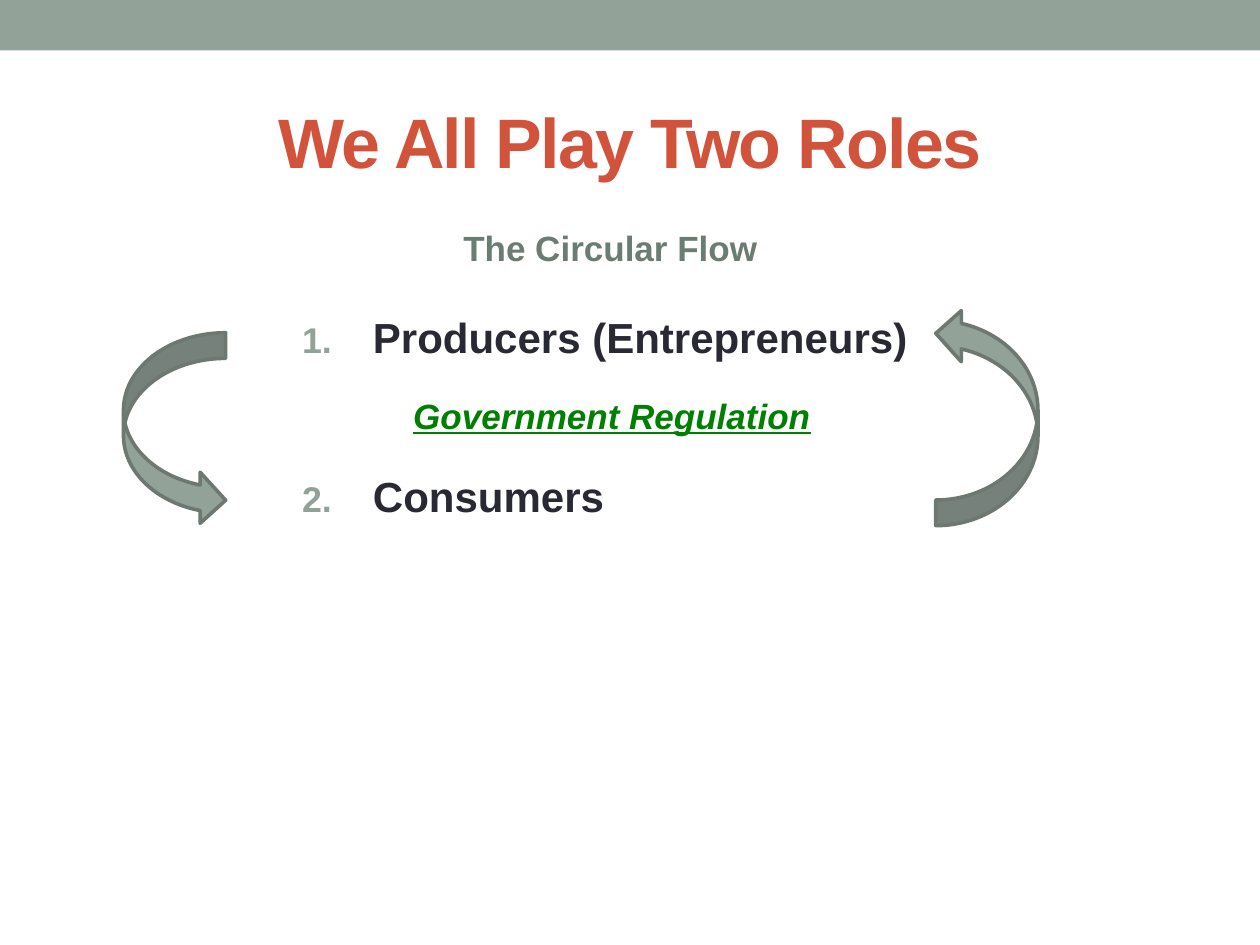
"""Build the slide on the two economic roles and the circular flow."""
from lxml import etree
from pptx import Presentation, util as u
from pptx.dml.color import RGBColor
from pptx.enum import shapes, text
from pptx.oxml.ns import qn

THEME = {
    "font": "Arial",
    "sage": RGBColor.from_string("93A299"),
    "outline": RGBColor.from_string("6D7871"),
    "title": RGBColor.from_string("D2533C"),
    "subtitle": RGBColor.from_string("6B7D72"),
    "body": RGBColor.from_string("292934"),
    "regulation": RGBColor.from_string("008000"),
    "title_size": u.Pt(40),
    "role_size": u.Pt(24),
    "label_size": u.Pt(20),
}


def add_run(p, wording, color, size, **extra):
    r = p.add_run()
    r.text = wording
    r.font.color.rgb = THEME[color]
    formats = {"name": THEME["font"], "size": THEME[size], "bold": True, **extra}
    for name, value in formats.items():
        setattr(r.font, name, value)
    return r


def add_filled(s, kind, box):
    sp = s.shapes.add_shape(kind, *map(u.Cm, box))
    sp.shadow.inherit = False
    sp.fill.solid()
    sp.fill.fore_color.rgb = THEME["sage"]
    return sp


prs = Presentation()
prs.slide_width, prs.slide_height = u.Cm(25.4), u.Cm(19.05)
s = prs.slides.add_slide(prs.slide_layouts[5])

band = add_filled(s, shapes.MSO_SHAPE.RECTANGLE, (0, 0, 25.4, 1.02))
band.line.fill.background()

title = s.shapes.title
title.left, title.top, title.width, title.height = map(u.Cm, (1.27, 1.47, 22.86, 2.74))
tf = title.text_frame
tf.auto_size = text.MSO_AUTO_SIZE.NONE
tf.vertical_anchor = text.MSO_ANCHOR.MIDDLE
p = tf.paragraphs[0]
p.alignment = text.PP_ALIGN.CENTER
r = add_run(p, "We All Play Two Roles", "title", "title_size")
r.font._element.set("spc", "-100")

roles = s.shapes.add_textbox(*map(u.Cm, (5.84, 6.15, 14.07, 5.28)))
tf = roles.text_frame
tf.word_wrap = True
for i, (role, gap) in enumerate([("Producers (Entrepreneurs)", 3), ("Consumers", 62)]):
    p = tf.add_paragraph() if i else tf.paragraphs[0]
    p.space_before = u.Pt(gap)
    add_run(p, role, "body", "role_size")
    pPr = p._p.get_or_add_pPr()
    pPr.set("marL", str(u.Cm(1.43)))
    pPr.set("indent", str(-u.Cm(1.43)))
    color = etree.SubElement(pPr, qn("a:buClr"))
    etree.SubElement(color, qn("a:srgbClr"), val=str(THEME["sage"]))
    etree.SubElement(pPr, qn("a:buSzPct"), val="85000")
    etree.SubElement(pPr, qn("a:buFont"), typeface=THEME["font"])
    etree.SubElement(pPr, qn("a:buAutoNum"), type="arabicPeriod")

for kind, box, rotation in [
    (shapes.MSO_SHAPE.CURVED_RIGHT_ARROW, (2.49, 6.71, 2.06, 3.89), 0),
    (shapes.MSO_SHAPE.CURVED_UP_ARROW, (17.7, 7.37, 4.39, 2.06), 270),
]:
    arrow = add_filled(s, kind, box)
    arrow.rotation = rotation
    arrow.line.color.rgb = THEME["outline"]
    arrow.line.width = u.Pt(2.08)

for wording, box, color, extra in [
    ("The Circular Flow", (9.09, 4.45, 6.6, 1.12), "subtitle", {}),
    ("Government Regulation", (8.08, 7.82, 8.6, 1.12), "regulation",
     {"italic": True, "underline": True}),
]:
    label = s.shapes.add_textbox(*map(u.Cm, box))
    tf = label.text_frame
    tf.word_wrap = True
    add_run(tf.paragraphs[0], wording, color, "label_size", **extra)

prs.save("out.pptx")
